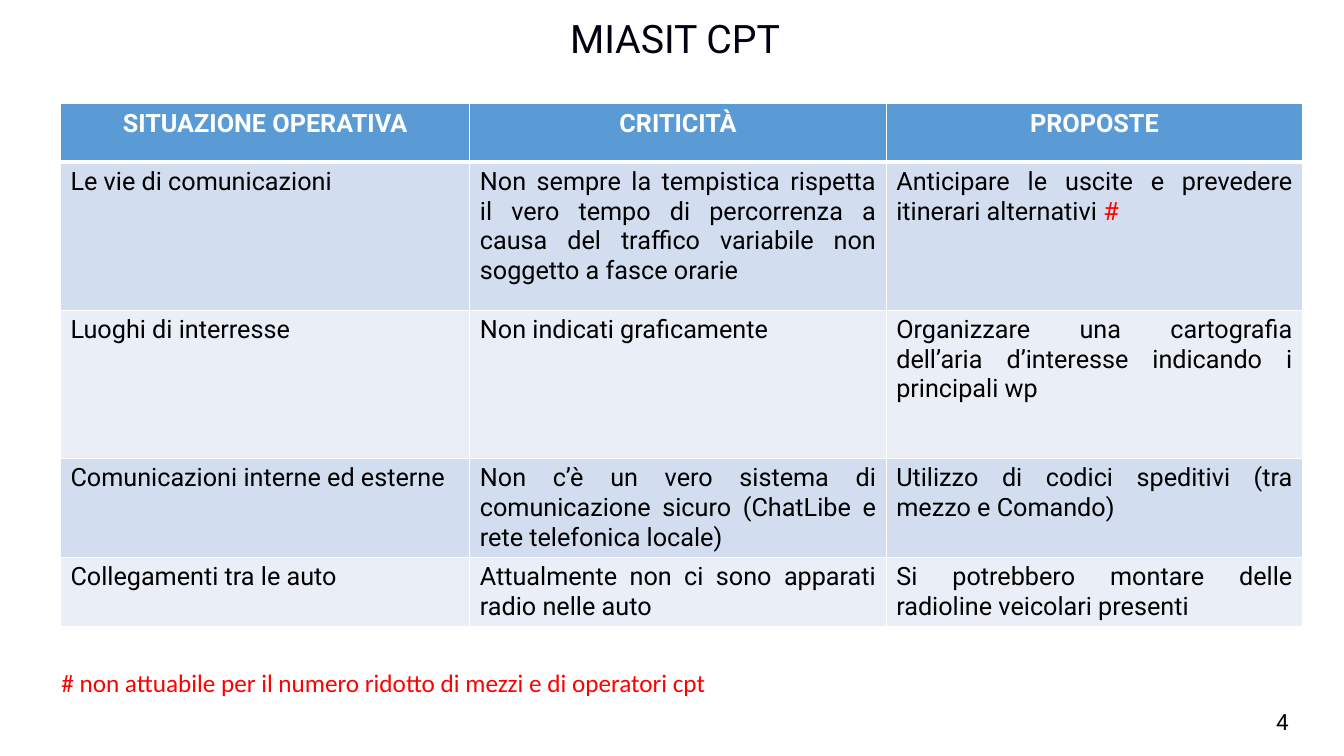
import pptx
import pptx.util
import pptx.dml.color
import pptx.enum.text
import lxml.etree
from pptx.util import Inches

COLORS = {
    "header": "5B9BD5",
    "band_dark": "D2DEEF",
    "band_light": "EAEFF7",
    "white": "FFFFFF",
    "black": "000000",
    "title": "000010",
    "red": "FF0000",
}
ALIGN = pptx.enum.text.PP_ALIGN


def write(para, text, size=18, font="Roboto", color="black", bold=False, align=ALIGN.LEFT):
    para.alignment = align
    span = para.add_run()
    span.text = text
    span.font.size = pptx.util.Pt(size)
    span.font.name = font
    span.font.bold = bold
    span.font.color.rgb = pptx.dml.color.RGBColor.from_string(COLORS[color])


def set_borders(cell, bottom):
    properties = cell._tc.get_or_add_tcPr()
    namespace = "{http://schemas.openxmlformats.org/drawingml/2006/main}"
    widths = {"lnL": 1, "lnR": 1, "lnT": 1, "lnB": bottom}
    for index, (side, width) in enumerate(widths.items()):
        line = lxml.etree.Element(namespace + side, w=str(pptx.util.Pt(width)))
        fill = lxml.etree.SubElement(line, namespace + "solidFill")
        lxml.etree.SubElement(fill, namespace + "srgbClr", val=COLORS["white"])
        properties.insert(index, line)


deck = pptx.Presentation()
deck.slide_width = Inches(13.33)
deck.slide_height = Inches(7.5)
page = deck.slides.add_slide(deck.slide_layouts[6])

# Table of situations, problems and proposals
rows = [
    ["SITUAZIONE OPERATIVA", "CRITICITÀ", "PROPOSTE"],
    [
        "Le vie di comunicazioni",
        "Non sempre la tempistica rispetta il vero tempo di percorrenza a causa "
        "del traffico variabile non soggetto a fasce orarie",
        "Anticipare le uscite e prevedere itinerari alternativi ",
    ],
    [
        "Luoghi di interresse",
        "Non indicati graficamente",
        "Organizzare una cartografia dell’aria d’interesse indicando i principali wp",
    ],
    [
        "Comunicazioni interne ed esterne",
        "Non c’è un vero sistema di comunicazione sicuro (ChatLibe e rete telefonica locale)",
        "Utilizzo di codici speditivi (tra mezzo e Comando)",
    ],
    [
        "Collegamenti tra le auto",
        "Attualmente non ci sono apparati radio nelle auto",
        "Si potrebbero montare delle radioline veicolari presenti",
    ],
]
column_widths = [4.06, 4.13, 4.13]
row_heights = [0.58, 1.47, 1.47, 0.98, 0.68]
table = page.shapes.add_table(
    len(rows), len(column_widths), Inches(0.6), Inches(1.03),
    Inches(sum(column_widths)), Inches(sum(row_heights)),
).table
for column, width in zip(table.columns, column_widths):
    column.width = Inches(width)

for row_index, texts in enumerate(rows):
    table.rows[row_index].height = Inches(row_heights[row_index])
    is_header = row_index == 0
    fill = "header" if is_header else "band_dark" if row_index % 2 else "band_light"
    for column_index, text in enumerate(texts):
        cell = table.cell(row_index, column_index)
        cell.fill.solid()
        cell.fill.fore_color.rgb = pptx.dml.color.RGBColor.from_string(COLORS[fill])
        set_borders(cell, bottom=3 if is_header else 1)
        write(
            cell.text_frame.paragraphs[0], text, bold=is_header,
            color="white" if is_header else "black",
            align=ALIGN.CENTER if is_header else ALIGN.JUSTIFY,
        )
# Red mark that refers to the footnote
write(table.cell(1, 2).text_frame.paragraphs[0], "#", color="red", align=ALIGN.JUSTIFY)

# Title, footnote and page number
labels = [
    ("MIASIT CPT", (0.94, 0.18, 11.51, 0.48), True,
     dict(size=28, color="title", align=ALIGN.CENTER)),
    ("# non attuabile per il numero ridotto di mezzi e di operatori cpt",
     (0.51, 6.57, 6.69, 0.4), False, dict(font="Calibri", color="red")),
    ("4", (12.33, 6.98, 0.78, 0.4), True, dict(size=16, align=ALIGN.CENTER)),
]
for text, place, wrap, style in labels:
    box = page.shapes.add_textbox(*[Inches(length) for length in place])
    box.text_frame.word_wrap = wrap
    para = box.text_frame.paragraphs[0]
    if text == "MIASIT CPT":
        para.line_spacing = 0.8
    write(para, text, **style)

deck.save("out.pptx")
